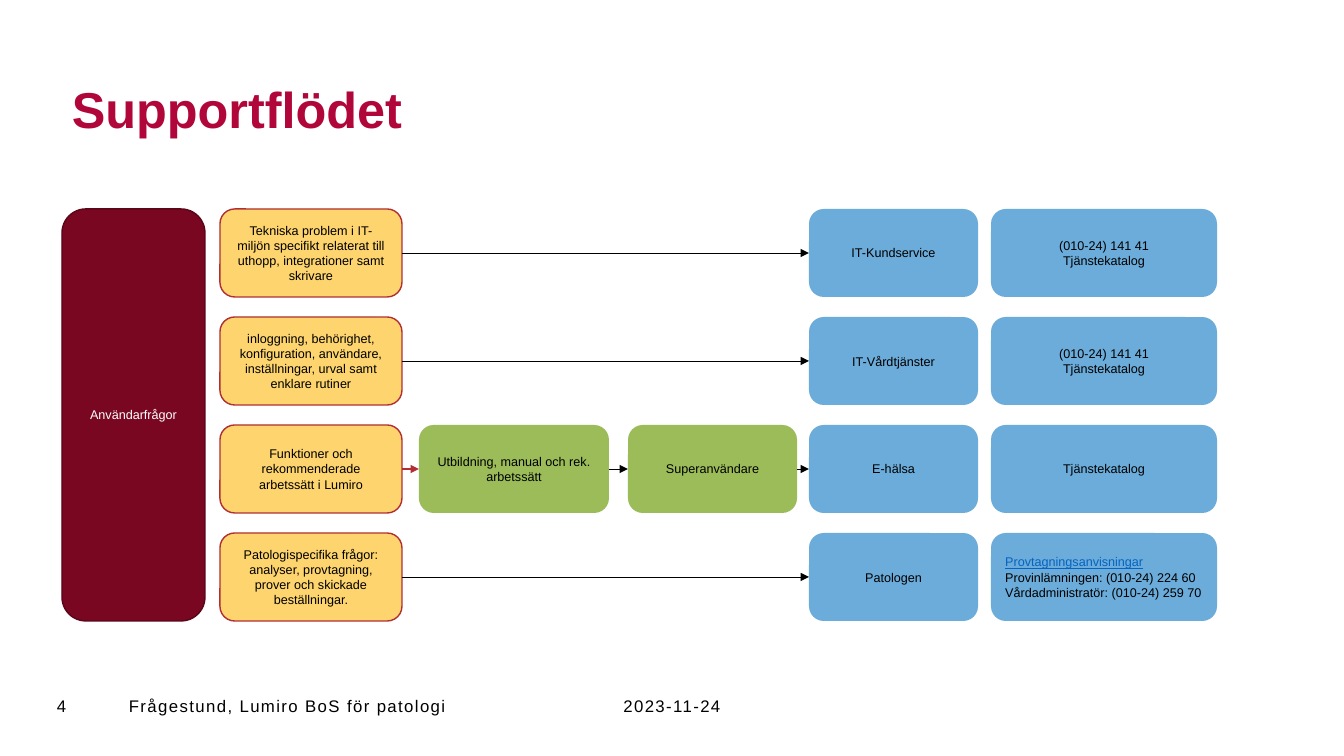
from itertools import pairwise

from lxml.etree import SubElement
from pptx import Presentation
from pptx.dml.color import RGBColor
from pptx.enum.shapes import MSO_CONNECTOR, MSO_SHAPE
from pptx.enum.text import MSO_ANCHOR, PP_ALIGN
from pptx.oxml.ns import qn
from pptx.util import Pt

PX = 914400 / 100.8
RED = "B12F32"
BLACK = "000000"
YELLOW = ("FDB913", 61)
GREEN = ("669900", 65)
BLUE = ("0070C0", 58)


def write(shape, lines, size, color, align, bold=False, spacing=0):
    frame = shape.text_frame
    frame.word_wrap = True
    frame.vertical_anchor = MSO_ANCHOR.MIDDLE
    for index, line in enumerate(lines):
        paragraph = frame.add_paragraph() if index else frame.paragraphs[0]
        paragraph.alignment = align
        run = paragraph.add_run()
        run.text = line
        run.font.name = "Arial"
        run.font.size = Pt(size)
        run.font.bold = bold
        run.font.color.rgb = RGBColor.from_string(color)
        if spacing:
            run.font._element.set("spc", str(spacing))


def add_box(bounds, lines, fill, outline=None, color=BLACK, align=PP_ALIGN.CENTER):
    box = slide.shapes.add_shape(MSO_SHAPE.ROUNDED_RECTANGLE, *[round(n * PX) for n in bounds])
    box.shadow.inherit = False
    shade, opacity = fill
    box.fill.solid()
    box.fill.fore_color.rgb = RGBColor.from_string(shade)
    if opacity < 100:
        srgb = box.fill._xPr.find(qn("a:solidFill")).find(qn("a:srgbClr"))
        SubElement(srgb, qn("a:alpha"), val=str(opacity * 1000))
    if outline:
        box.line.color.rgb = RGBColor.from_string(outline)
        box.line.width = Pt(1)
    else:
        box.line.fill.background()
    write(box, lines, 9, color, align)
    return box


prs = Presentation()
prs.slide_width = round(1344 * PX)
prs.slide_height = round(756 * PX)
slide = prs.slides.add_slide(prs.slide_layouts[6])

headings = [
    ((62, 61, 1032, 95), "Supportflödet", 36, "B1063A", PP_ALIGN.LEFT, True, 0),
    ((47, 686, 57, 40), "4", 12, BLACK, PP_ALIGN.LEFT, False, 0),
    ((119, 686, 397, 40), "Frågestund, Lumiro BoS för patologi", 12, BLACK, PP_ALIGN.LEFT, False, 100),
    ((535, 686, 274, 40), "2023-11-24", 12, BLACK, PP_ALIGN.CENTER, False, 100),
]
for bounds, text, size, color, align, bold, spacing in headings:
    heading = slide.shapes.add_textbox(*[round(n * PX) for n in bounds])
    write(heading, [text], size, color, align, bold, spacing)

TOP, ROW_HEIGHT, ROW_PITCH = 209, 88, 108
flows = [
    ("Tekniska problem i IT-miljön specifikt relaterat till uthopp, integrationer samt skrivare",
     [], "IT-Kundservice", ["(010-24) 141 41", "Tjänstekatalog"]),
    ("inloggning, behörighet, konfiguration, användare, inställningar, urval samt enklare rutiner",
     [], "IT-Vårdtjänster", ["(010-24) 141 41", "Tjänstekatalog"]),
    ("Funktioner och rekommenderade arbetssätt i Lumiro",
     [(419, 190, "Utbildning, manual och rek. arbetssätt"), (628, 169, "Superanvändare")],
     "E-hälsa", ["Tjänstekatalog"]),
    ("Patologispecifika frågor: analyser, provtagning, prover och skickade beställningar.",
     [], "Patologen",
     ["Provtagningsanvisningar", "Provinlämningen: (010-24) 224 60", "Vårdadministratör: (010-24) 259 70"]),
]

add_box((62, TOP, 143, 3 * ROW_PITCH + ROW_HEIGHT), ["Användarfrågor"], ("790721", 100), "5A0518", "FFFFFF")

for row, (topic, steps, unit, contact) in enumerate(flows):
    top = TOP + row * ROW_PITCH
    chain = [add_box((220, top, 182, ROW_HEIGHT), [topic], YELLOW, RED)]
    for left, width, step in steps:
        chain.append(add_box((left, top, width, ROW_HEIGHT), [step], GREEN))
    chain.append(add_box((809, top, 169, ROW_HEIGHT), [unit], BLUE))

    is_list = len(contact) > 2
    contact_align = PP_ALIGN.LEFT if is_list else PP_ALIGN.CENTER
    contact_box = add_box((991, top, 226, ROW_HEIGHT), contact, BLUE, align=contact_align)
    if is_list:
        guide = contact_box.text_frame.paragraphs[0].runs[0]
        guide.font.underline = True
        guide.font.color.rgb = RGBColor.from_string("0563C1")

    for source, target in pairwise(chain):
        arrow = slide.shapes.add_connector(MSO_CONNECTOR.STRAIGHT, 0, 0, 0, 0)
        arrow.begin_connect(source, 3)
        arrow.end_connect(target, 1)
        to_training = source is chain[0] and bool(steps)
        arrow.line.color.rgb = RGBColor.from_string(RED if to_training else BLACK)
        arrow.line.width = Pt(1 if to_training else 0.5)
        SubElement(arrow.line._get_or_add_ln(), qn("a:tailEnd"), type="triangle")
        SubElement(arrow._element.spPr, qn("a:effectLst"))

prs.save("out.pptx")
